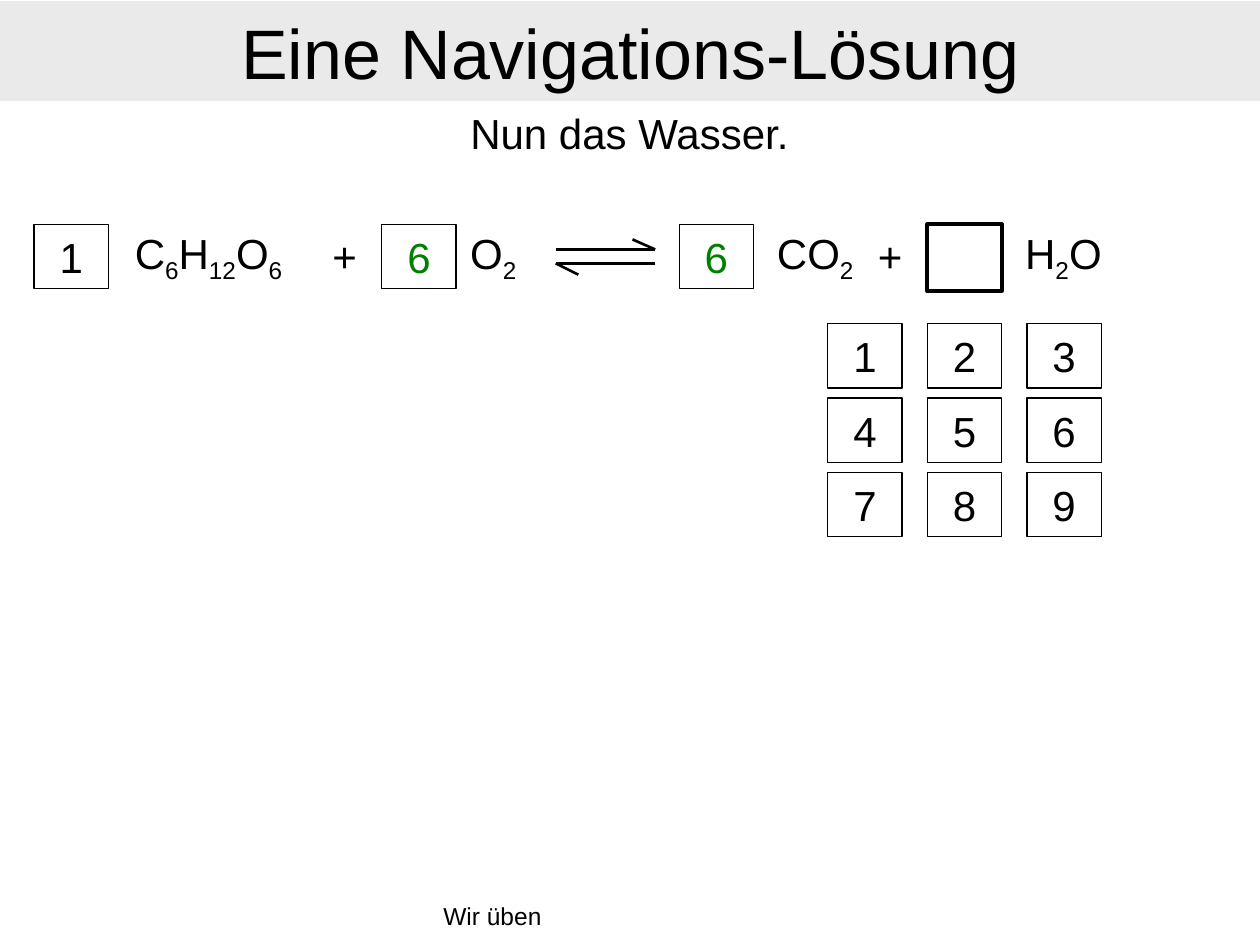
from itertools import groupby
from lxml import etree
from pptx import Presentation
from pptx.dml.color import RGBColor
from pptx.enum.shapes import MSO_CONNECTOR, MSO_SHAPE
from pptx.enum.text import MSO_ANCHOR, PP_ALIGN
from pptx.oxml.ns import qn
from pptx.util import Inches, Pt

BLACK = RGBColor(0x00, 0x00, 0x00)
GREEN = RGBColor(0x00, 0x80, 0x00)
GREY = RGBColor(0xEA, 0xEA, 0xEA)
RECT = MSO_SHAPE.RECTANGLE
LINE = MSO_CONNECTOR.STRAIGHT
MIDDLE, TOP = MSO_ANCHOR.MIDDLE, MSO_ANCHOR.TOP
CENTER, LEFT = PP_ALIGN.CENTER, PP_ALIGN.LEFT

SIDE, TALL = 0.59, 0.51
ROW = 1.78

prs = Presentation()
prs.slide_width, prs.slide_height = Inches(10), Inches(7.5)
slide = prs.slides.add_slide(prs.slide_layouts[6])
shapes = slide.shapes


def write(shape, text, size=24, color=BLACK, align=CENTER, anchor=MIDDLE):
    frame = shape.text_frame
    frame.word_wrap = True
    frame.vertical_anchor = anchor
    para = frame.paragraphs[0]
    para.alignment = align
    for digit, chars in groupby(text, str.isdigit):
        run = para.add_run()
        run.text = "".join(chars)
        run.font.name = "Arial"
        run.font.size = Pt(size)
        run.font.color.rgb = color
        if digit and not text.isdigit():
            run.font._element.set("baseline", "-25000")


def add_box(left, top, text, color=BLACK, width=0.75, tall=TALL):
    box = shapes.add_shape(RECT, Inches(left), Inches(top), Inches(SIDE), Inches(tall))
    box.shadow.inherit = False
    box.fill.background()
    box.line.color.rgb = BLACK
    box.line.width = Pt(width)
    if text:
        write(box, text, color=color)


foot = shapes.add_textbox(Inches(3.42), Inches(7.1), Inches(3.17), Inches(0.39))
write(foot, "Wir üben", size=14, align=LEFT, anchor=TOP)

title = shapes.add_shape(RECT, Inches(0), Inches(0.01), Inches(10), Inches(0.79))
title.shadow.inherit = False
title.fill.solid()
title.fill.fore_color.rgb = GREY
title.line.fill.background()
write(title, "Eine Navigations-Lösung", size=40)

labels = [
    (0.27, 0.8, 9.45, "Nun das Wasser."),
    (0.87, ROW, 1.57, "C6H12O6"),
    (2.44, ROW, SIDE, "+"),
    (3.62, ROW, SIDE, "O2"),
    (5.98, ROW, 0.98, "CO2"),
    (6.77, ROW, SIDE, "+"),
    (7.95, ROW, 0.98, "H2O"),
]
for left, top, width, text in labels:
    label = shapes.add_textbox(Inches(left), Inches(top), Inches(width), Inches(0.5))
    write(label, text)

for left, text, color in [(0.27, "1", BLACK), (3.03, "6", GREEN), (5.39, "6", GREEN)]:
    add_box(left, ROW, text, color)
add_box(7.36, ROW, "", width=2.25, tall=0.53)

for num in range(9):
    row, col = divmod(num, 3)
    add_box(6.57 + 0.79 * col, 2.57 + SIDE * row, str(num + 1))

arrows = shapes.add_group_shape()
strokes = [
    (4.41, 1.98, 5.2, 1.98),
    (5.2, 1.98, 5.02, 1.9),
    (5.2, 2.09, 4.41, 2.09),
    (4.41, 2.09, 4.59, 2.18),
]
for ends in strokes:
    stroke = arrows.shapes.add_connector(LINE, *map(Inches, ends))
    stroke.line.color.rgb = BLACK
    stroke.line.width = Pt(1.5)
    etree.SubElement(stroke._element.spPr, qn("a:effectLst"))

prs.save("out.pptx")
